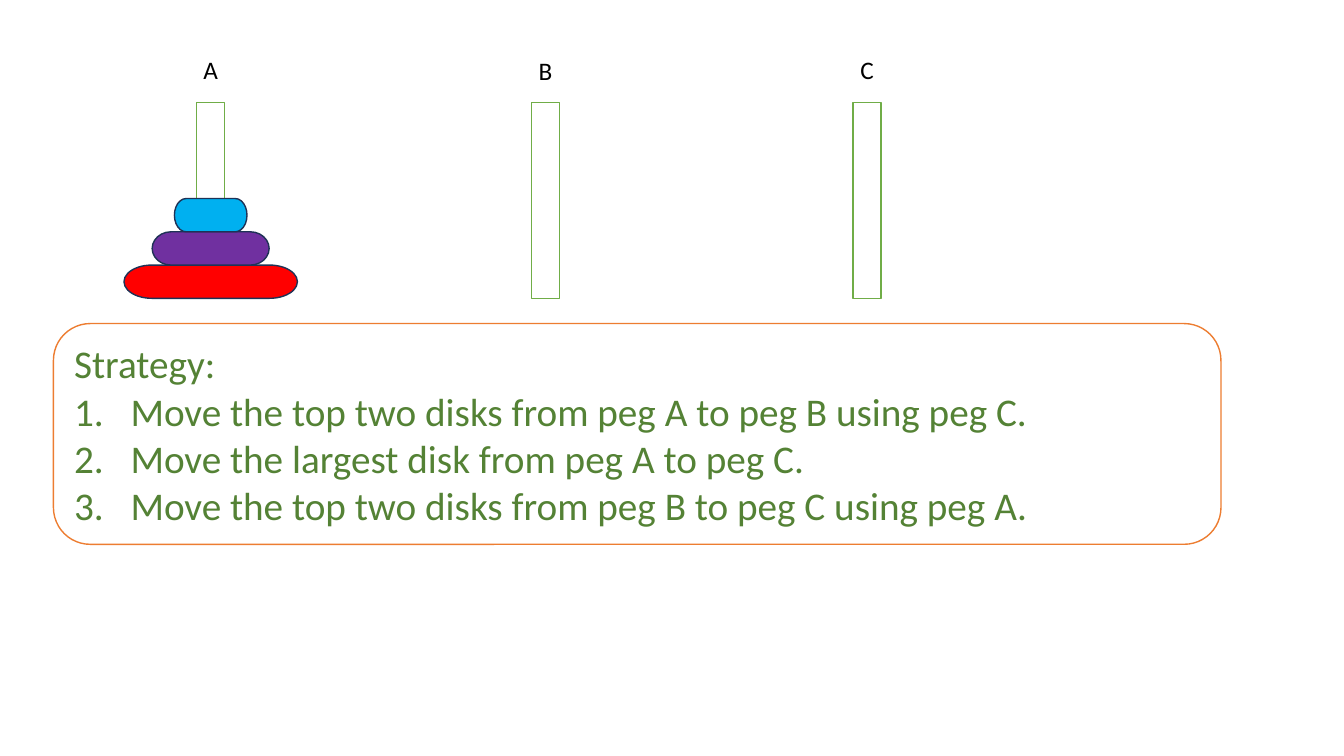
import pptx
import pptx.util
import pptx.dml.color
import pptx.enum.shapes
import pptx.enum.text
import pptx.oxml

PX = 9144
SHAPES = pptx.enum.shapes.MSO_SHAPE
ANCHORS = pptx.enum.text.MSO_ANCHOR
ALIGNS = pptx.enum.text.PP_ALIGN


def paint(target, colour):
    if hasattr(target, "solid"):
        target.solid()
        target = target.fore_color
    else:
        target = target.color
    target.rgb = pptx.dml.color.RGBColor.from_string(colour)


def write(para, text, size=18, colour="000000", align=ALIGNS.LEFT, numbered=False):
    para.alignment = align
    span = para.add_run()
    span.text = text
    span.font.name = "Calibri"
    span.font.size = pptx.util.Pt(size)
    paint(span.font, colour)
    if numbered:
        properties = para._p.get_or_add_pPr()
        properties.set("marL", str(56 * PX))
        properties.set("indent", str(-56 * PX))
        number = pptx.oxml.parse_xml(
            '<a:buAutoNum xmlns:a="http://schemas.openxmlformats.org/drawingml/2006/main"'
            ' type="arabicPeriod"/>'
        )
        properties.append(number)


deck = pptx.Presentation()
deck.slide_width = 1333 * PX
deck.slide_height = 750 * PX
page = deck.slides.add_slide(deck.slide_layouts[6])

pegs = [("A", 209, 49), ("B", 541, 50), ("C", 860, 49)]
disks = [(172, "FF0000"), (116, "7030A0"), (72, "00B0F0")]
disk_height = 33
base = 296

outlines = []
for name, middle, top in pegs:
    outlines.append((SHAPES.RECTANGLE, middle - 14, 102, 28, 194, "FFFFFF", "70AD47"))
for level, (width, colour) in enumerate(disks, start=1):
    outlines.append((SHAPES.FLOWCHART_TERMINATOR, pegs[0][1] - width // 2,
                     base - level * disk_height, width, disk_height, colour, "1E3256"))
outlines.append((SHAPES.ROUNDED_RECTANGLE, 53, 321, 1158, 219, "FFFFFF", "ED7D31"))

for kind, left, top, width, height, fill, line in outlines:
    box = page.shapes.add_shape(kind, left * PX, top * PX, width * PX, height * PX)
    box.shadow.inherit = False
    paint(box.fill, fill)
    paint(box.line, line)
    box.line.width = pptx.util.Pt(1)

strategy = box.text_frame
strategy.word_wrap = True
strategy.vertical_anchor = ANCHORS.MIDDLE
write(strategy.paragraphs[0], "Strategy:", size=28, colour="548235")
for step in [
    "Move the top two disks from peg A to peg B using peg C.",
    "Move the largest disk from peg A to peg C.",
    "Move the top two disks from peg B to peg C using peg A.",
]:
    write(strategy.add_paragraph(), step, size=28, colour="548235", numbered=True)

for name, middle, top in pegs:
    label = page.shapes.add_textbox((middle - 17) * PX, top * PX, 34 * PX, 40 * PX)
    label.text_frame.word_wrap = False
    label.text_frame.auto_size = pptx.enum.text.MSO_AUTO_SIZE.SHAPE_TO_FIT_TEXT
    write(label.text_frame.paragraphs[0], name, align=ALIGNS.CENTER)

deck.save("out.pptx")
